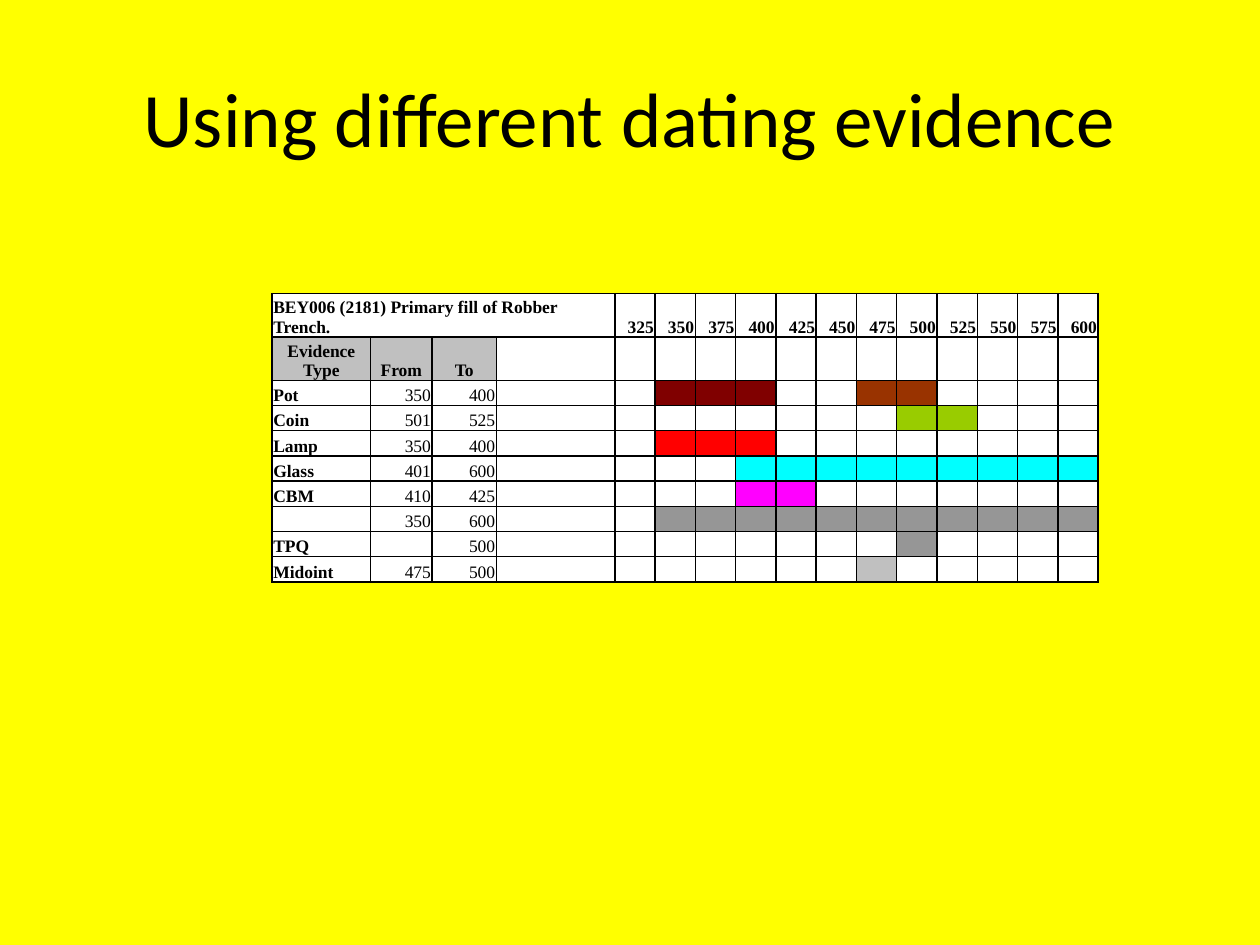
"""Build the slide that compares dating evidence on a time grid."""
import lxml.etree
import pptx
import pptx.dml.color
import pptx.enum.text
import pptx.oxml.ns
import pptx.util

Inches = pptx.util.Inches
Pt = pptx.util.Pt
RGB = pptx.dml.color.RGBColor.from_string
Align = pptx.enum.text.PP_ALIGN
Anchor = pptx.enum.text.MSO_ANCHOR
qn = pptx.oxml.ns.qn

TITLE = "Using different dating evidence"
TRENCH = "BEY006 (2181) Primary fill of Robber Trench."
HEADS = ("Evidence Type", "From", "To")
YEARS = list(range(325, 601, 25))
FINDS = [
    ("Pot", "350", "400", [(350, 400, "maroon"), (475, 500, "brown")]),
    ("Coin", "501", "525", [(500, 525, "lime")]),
    ("Lamp", "350", "400", [(350, 400, "red")]),
    ("Glass", "401", "600", [(400, 600, "cyan")]),
    ("CBM", "410", "425", [(400, 425, "pink")]),
    ("", "350", "600", [(350, 600, "gray")]),
    ("TPQ", "", "500", [(500, 500, "gray")]),
    ("Midoint", "475", "500", [(475, 475, "silver")]),
]
THEME = {
    "yellow": "FFFF00", "black": "000000", "white": "FFFFFF",
    "silver": "C0C0C0", "gray": "969696", "maroon": "800000",
    "brown": "993300", "lime": "99CC00", "red": "FF0000",
    "cyan": "00FFFF", "pink": "FF00FF",
    "title": {"name": "Calibri", "size": Pt(44), "bold": False},
    "cell": {"name": "Times New Roman", "size": Pt(10)},
    "line": Pt(1),
}
INSET = {
    "margin_left": Inches(0.01), "margin_right": Inches(0.01),
    "margin_top": Inches(0.01), "margin_bottom": 0,
    "vertical_anchor": Anchor.BOTTOM,
}
WIDTHS = [0.78, 0.49, 0.51, 0.94] + [0.32] * len(YEARS)
HEIGHTS = [0.32] * 2 + [0.2] * len(FINDS)


def apply(item, values):
    for key, value in values.items():
        setattr(item, key, value)


def paint(fill, name):
    fill.solid()
    fill.fore_color.rgb = RGB(THEME[name])


def write(para, text, style, align):
    para.alignment = align
    run = para.add_run()
    run.text = text
    apply(run.font, style)
    run.font.color.rgb = RGB(THEME["black"])


def edge(cell):
    props = cell._tc.get_or_add_tcPr()
    for side in ("a:lnL", "a:lnR", "a:lnT", "a:lnB"):
        line = lxml.etree.SubElement(props, qn(side), w=str(THEME["line"]))
        solid = lxml.etree.SubElement(line, qn("a:solidFill"))
        lxml.etree.SubElement(solid, qn("a:srgbClr"), val=THEME["black"])


def put(cell, text="", align=Align.LEFT, bold=False, fill="white"):
    apply(cell, INSET)
    edge(cell)
    paint(cell.fill, fill)
    para = cell.text_frame.paragraphs[0]
    if text:
        write(para, text, {**THEME["cell"], "bold": bold}, align)
    else:
        size = str(int(THEME["cell"]["size"].pt * 100))
        lxml.etree.SubElement(para._p, qn("a:endParaRPr"), sz=size)


def shade(year, bands):
    return next((hue for start, end, hue in bands if start <= year <= end), "white")


def add_title(slide):
    box = slide.shapes.add_textbox(Inches(0.5), Inches(0.3), Inches(9), Inches(1.25))
    paint(box.fill, "yellow")
    frame = box.text_frame
    apply(frame, {"word_wrap": True, "vertical_anchor": Anchor.MIDDLE})
    write(frame.paragraphs[0], TITLE, THEME["title"], Align.CENTER)


def add_grid(slide):
    grid = slide.shapes.add_table(
        len(HEIGHTS), len(WIDTHS), Inches(2.16), Inches(2.33),
        Inches(sum(WIDTHS)), Inches(sum(HEIGHTS))).table
    apply(grid, {"first_row": False, "horz_banding": False})
    for col, width in zip(grid.columns, WIDTHS):
        col.width = Inches(width)
    for row, height in zip(grid.rows, HEIGHTS):
        row.height = Inches(height)

    blank = {}
    top = [{"text": TRENCH, "bold": True}, blank, blank, blank]
    top += [{"text": str(year), "align": Align.RIGHT, "bold": True} for year in YEARS]
    head = [{"text": text, "align": Align.CENTER, "bold": True, "fill": "silver"}
            for text in HEADS]
    rows = [top, head + [blank] * (1 + len(YEARS))]
    for name, start, end, bands in FINDS:
        dates = [{"text": date, "align": Align.RIGHT} for date in (start, end)]
        rows.append([{"text": name, "bold": True}, *dates, blank]
                    + [{"fill": shade(year, bands)} for year in YEARS])
    for r, row in enumerate(rows):
        for c, values in enumerate(row):
            put(grid.cell(r, c), **values)
    grid.cell(0, 0).merge(grid.cell(0, 3))


def main():
    deck = pptx.Presentation()
    apply(deck, {"slide_width": Inches(10), "slide_height": Inches(7.5)})
    slide = deck.slides.add_slide(deck.slide_layouts[6])
    paint(slide.background.fill, "yellow")
    add_title(slide)
    add_grid(slide)
    deck.save("out.pptx")


if __name__ == "__main__":
    main()
